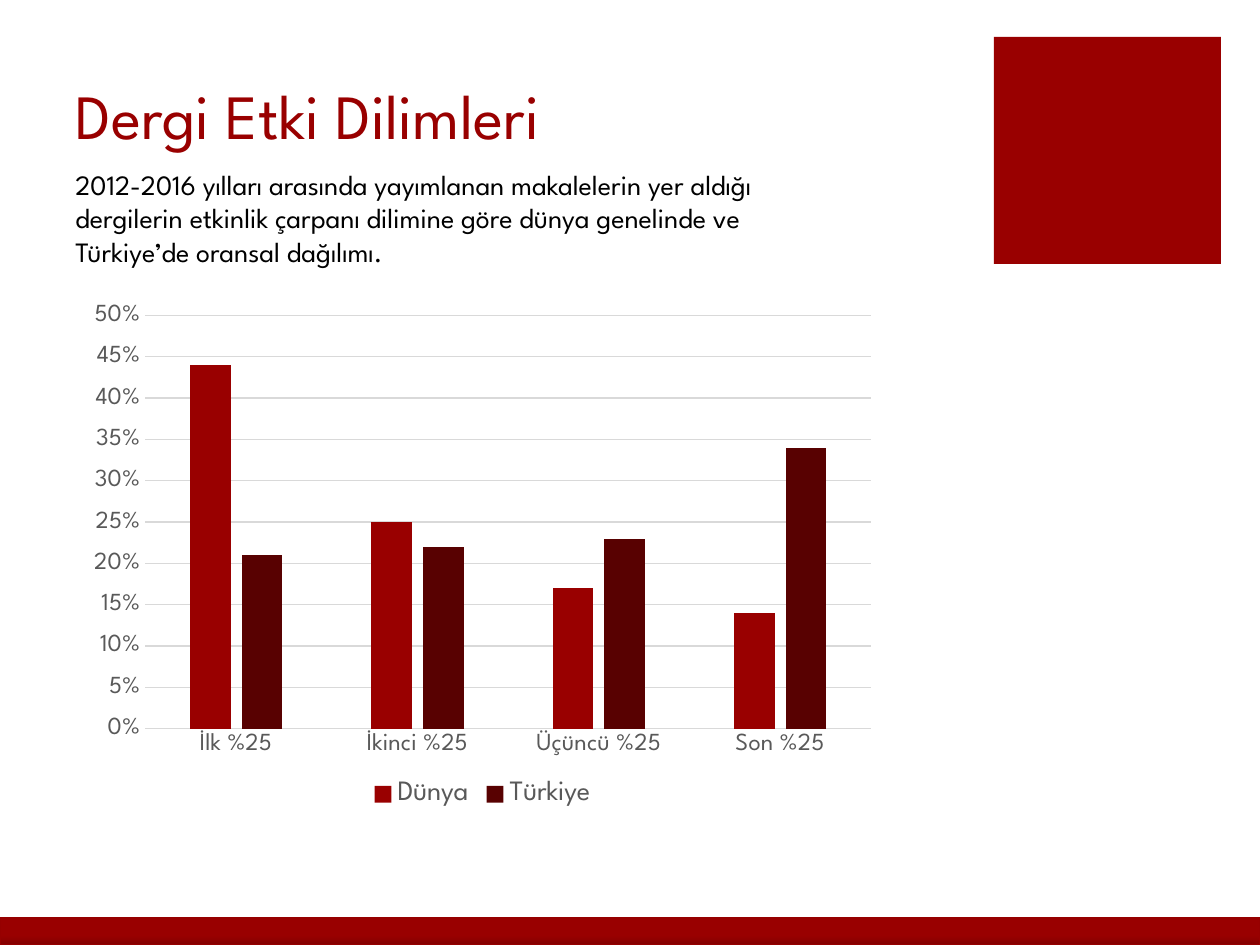
from pptx import Presentation
from pptx import util as u
from pptx.chart import data
from pptx.dml import color
from pptx.enum import chart as kinds, shapes, text

# Content
TITLE = "Dergi Etki Dilimleri"
SUMMARY = [
    "2012-2016 yılları arasında yayımlanan makalelerin yer aldığı",
    "dergilerin etkinlik çarpanı dilimine göre dünya genelinde ve",
    "Türkiye’de oransal dağılımı.",
]
QUARTILES = ["İlk %25", "İkinci %25", "Üçüncü %25", "Son %25"]
SHARES = {
    "Dünya": [0.44, 0.25, 0.17, 0.14],
    "Türkiye": [0.21, 0.22, 0.23, 0.34],
}

# Theme
THEME = {
    "font": "League Spartan",
    "red": "990000", "dark red": "580101", "shade": "830000", "edge": "960000",
    "black": "000000", "grey": "595959", "grid": "D9D9D9",
    "title": 36, "body": 16, "legend": 16, "axis": 14, "chart": 10,
}

# Places in px: left, top, width, height
PX = u.Inches(1) / 126
SLIDE = (1260, 945)
PLACES = {
    "square": (994, 37, 227, 227),
    "title": (63, 0, 897, 158),
    "chart": (78, 294, 809, 519),
    "summary": (63, 161, 843, 115),
    "footer": (0, 918, 1260, 27),
}


def place(name):
    return [round(value * PX) for value in PLACES[name]]


def rgb(name):
    return color.RGBColor.from_string(THEME[name])


def set_all(target, **values):
    for name, value in values.items():
        setattr(target, name, value)


def format_font(font, size, colour):
    set_all(font, name=THEME["font"], size=u.Pt(THEME[size]), bold=False)
    font.color.rgb = rgb(colour)


def add_rectangle(slide, name):
    shape = slide.shapes.add_shape(shapes.MSO_SHAPE.RECTANGLE, *place(name))
    shape.shadow.inherit = False
    return shape


def add_square(slide):
    square = add_rectangle(slide, "square")
    square.fill.solid()
    square.fill.fore_color.rgb = rgb("red")
    square.line.fill.background()


def add_footer(slide):
    footer = add_rectangle(slide, "footer")
    footer.fill.gradient()
    footer.fill.gradient_angle = 90
    stops = [(0, "shade"), (0.35, "red")]
    for stop, (position, colour) in zip(footer.fill.gradient_stops, stops):
        stop.position = position
        stop.color.rgb = rgb(colour)
    footer.line.color.rgb = rgb("edge")
    footer.line.width = u.Pt(1)


def fill_title(slide):
    title = slide.shapes.title
    left, top, width, height = place("title")
    set_all(title, left=left, top=top, width=width, height=height)
    set_all(title.text_frame, text=TITLE, word_wrap=True,
            auto_size=text.MSO_AUTO_SIZE.NONE,
            vertical_anchor=text.MSO_ANCHOR.BOTTOM)
    paragraph = title.text_frame.paragraphs[0]
    paragraph.alignment = text.PP_ALIGN.LEFT
    format_font(paragraph.runs[0].font, "title", "red")


def add_summary(slide):
    frame = slide.shapes.add_textbox(*place("summary")).text_frame
    set_all(frame, text="\n".join(SUMMARY), word_wrap=False,
            auto_size=text.MSO_AUTO_SIZE.SHAPE_TO_FIT_TEXT)
    for paragraph in frame.paragraphs:
        paragraph.alignment = text.PP_ALIGN.LEFT
        format_font(paragraph.runs[0].font, "body", "black")


def add_share_chart(slide):
    chart_data = data.CategoryChartData(number_format="0%")
    chart_data.categories = QUARTILES
    for name, values in SHARES.items():
        chart_data.add_series(name, values)
    chart = slide.shapes.add_chart(
        kinds.XL_CHART_TYPE.COLUMN_CLUSTERED, *place("chart"), chart_data).chart
    set_all(chart, has_title=False, has_legend=True)
    format_font(chart.font, "chart", "black")

    # Columns
    plot = chart.plots[0]
    set_all(plot, gap_width=219, overlap=-27, vary_by_categories=False)
    for series, colour in zip(plot.series, ("red", "dark red")):
        series.format.fill.solid()
        series.format.fill.fore_color.rgb = rgb(colour)
        series.invert_if_negative = False

    # Axes
    categories, values = chart.category_axis, chart.value_axis
    for axis in (categories, values):
        set_all(axis, major_tick_mark=kinds.XL_TICK_MARK.NONE,
                minor_tick_mark=kinds.XL_TICK_MARK.NONE)
        format_font(axis.tick_labels.font, "axis", "grey")
    set_all(values, minimum_scale=0, maximum_scale=0.5, major_unit=0.05,
            has_major_gridlines=True)
    set_all(values.tick_labels, number_format="0%", number_format_is_linked=False)
    values.format.line.fill.background()
    for line in (categories.format.line, values.major_gridlines.format.line):
        line.color.rgb = rgb("grid")
        line.width = u.Pt(0.75)

    # Legend
    set_all(chart.legend, position=kinds.XL_LEGEND_POSITION.BOTTOM,
            include_in_layout=False)
    format_font(chart.legend.font, "legend", "grey")


def main():
    presentation = Presentation()
    width, height = SLIDE
    set_all(presentation, slide_width=round(width * PX),
            slide_height=round(height * PX))
    title_only = presentation.slide_layouts[5]
    slide = presentation.slides.add_slide(title_only)
    add_square(slide)
    fill_title(slide)
    add_share_chart(slide)
    add_summary(slide)
    add_footer(slide)
    presentation.save("out.pptx")


if __name__ == "__main__":
    main()
